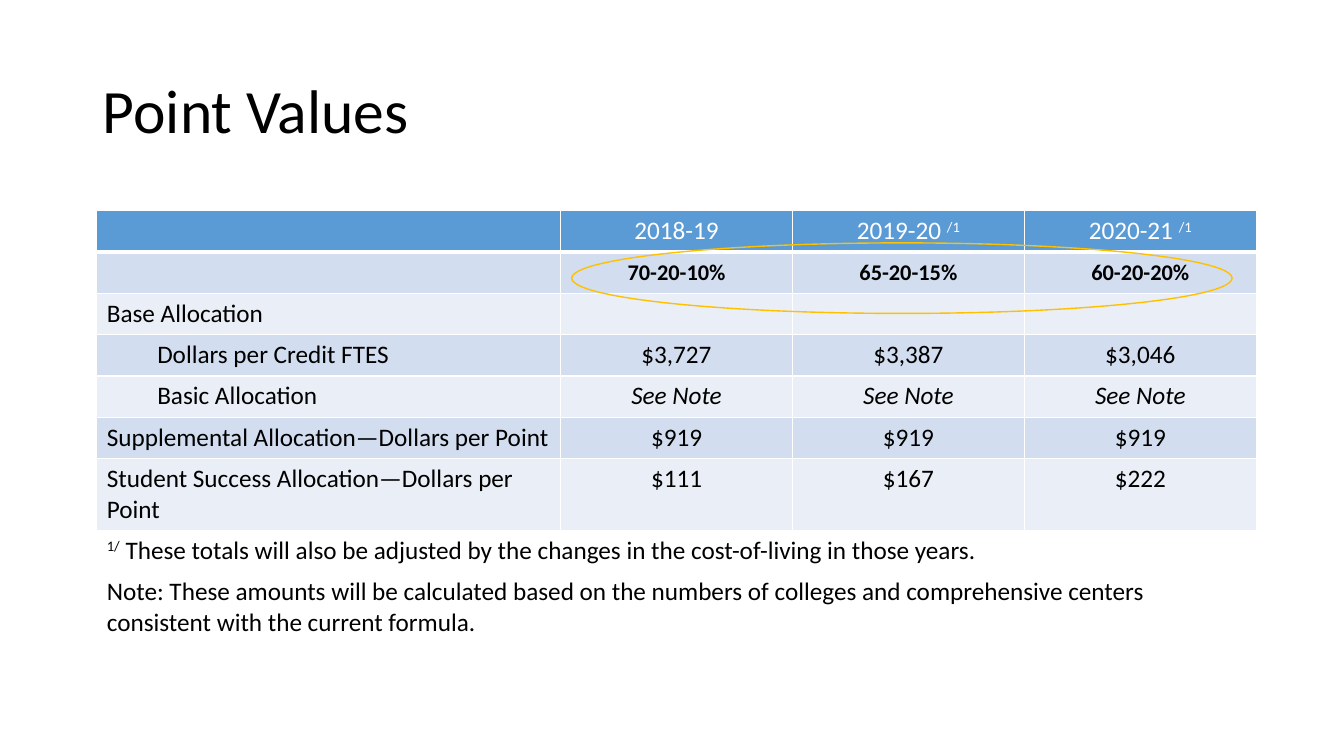
from dataclasses import dataclass, field

from lxml.etree import SubElement
from pptx import Presentation
from pptx.dml.color import RGBColor
from pptx.enum.shapes import MSO_SHAPE
from pptx.enum.text import MSO_ANCHOR, PP_ALIGN
from pptx.oxml.ns import qn
from pptx.util import Pt

PX = 9144  # EMU in one px, 100 px to the inch
COLOURS = {
    "header": "5B9BD5",
    "band_dark": "D2DEEF",
    "band_light": "EAEFF7",
    "white": "FFFFFF",
    "text": "000000",
    "highlight": "FFC000",
}
COLUMN_WIDTHS = [460, 230, 230, 230]
ROW_HEIGHT = 41
INDENT = 50
SUPERSCRIPT = "30000"


@dataclass
class Part:
    text: str
    raised: bool = False


@dataclass
class Row:
    label: list[Part]
    values: list[list[Part]]
    fill: str | None
    level: int = 0
    colour: str = "text"
    anchor: MSO_ANCHOR = MSO_ANCHOR.TOP
    format: dict = field(default_factory=dict)


def plain(*texts: str) -> list[list[Part]]:
    return [[Part(text)] if text else [] for text in texts]


def year(text: str) -> list[Part]:
    return [Part(f"{text} "), Part("/1", raised=True)]


ROWS = [
    Row([], [*plain("2018-19"), year("2019-20"), year("2020-21")],
        "header", colour="white"),
    Row([], plain("70-20-10%", "65-20-15%", "60-20-20%"), "band_dark",
        anchor=MSO_ANCHOR.MIDDLE, format={"size": Pt(16), "bold": True}),
    Row([Part("Base Allocation")], plain("", "", ""), "band_light"),
    Row([Part("Dollars per Credit FTES")], plain("$3,727", "$3,387", "$3,046"),
        "band_dark", level=1),
    Row([Part("Basic Allocation")], plain("See Note", "See Note", "See Note"),
        "band_light", level=1, format={"italic": True}),
    Row([Part("Supplemental Allocation—Dollars per Point")],
        plain("$919", "$919", "$919"), "band_dark"),
    Row([Part("Student Success Allocation—Dollars per Point")],
        plain("$111", "$167", "$222"), "band_light"),
    Row([Part("1/", raised=True),
         Part(" These totals will also be adjusted by the changes in the "
              "cost-of-living in those years.")], [], None),
    Row([Part("Note: These amounts will be calculated based on the numbers of "
              "colleges and comprehensive centers consistent with the current "
              "formula.")], [], None),
]


def rgb(name: str) -> RGBColor:
    return RGBColor.from_string(COLOURS[name])


def place(shape, left: int, top: int, width: int, height: int) -> None:
    box = {"left": left, "top": top, "width": width, "height": height}
    for name, length in box.items():
        setattr(shape, name, length * PX)


def format_font(font, colour: str, values: dict) -> None:
    for name, value in ({"name": "Calibri"} | values).items():
        setattr(font, name, value)
    font.color.rgb = rgb(colour)


def add_borders(cell, bottom_points: int) -> None:
    properties = cell._tc.get_or_add_tcPr()
    for side, points in {"L": 1, "R": 1, "T": 1, "B": bottom_points}.items():
        border = SubElement(properties, qn(f"a:ln{side}"), w=str(Pt(points)))
        fill = SubElement(border, qn("a:solidFill"))
        SubElement(fill, qn("a:srgbClr"), val=COLOURS["white"])


def fill_cell(cell, parts: list[Part], row: Row, is_label: bool) -> None:
    add_borders(cell, bottom_points=3 if row.fill == "header" else 1)
    if row.fill:
        cell.fill.solid()
        cell.fill.fore_color.rgb = rgb(row.fill)
    else:
        cell.fill.background()
    cell.vertical_anchor = row.anchor
    paragraph = cell.text_frame.paragraphs[0]
    paragraph.alignment = PP_ALIGN.LEFT if is_label else PP_ALIGN.CENTER
    if is_label and row.level:
        paragraph.level = row.level
        paragraph._p.get_or_add_pPr().set("marL", str(row.level * INDENT * PX))
    base = {"size": Pt(18), "bold": False, "italic": False}
    for part in parts:
        run = paragraph.add_run()
        run.text = part.text
        format_font(run.font, row.colour, base if is_label else base | row.format)
        if part.raised:
            run._r.get_or_add_rPr().set("baseline", SUPERSCRIPT)


def add_title(slide) -> None:
    title = slide.shapes.title
    place(title, 92, 40, 1150, 145)
    title.text_frame.text = "Point Values"
    title.text_frame.vertical_anchor = MSO_ANCHOR.MIDDLE
    paragraph = title.text_frame.paragraphs[0]
    paragraph.alignment = PP_ALIGN.LEFT
    paragraph.line_spacing = 0.9
    format_font(paragraph.runs[0].font, "text", {"size": Pt(44)})


def add_point_table(slide) -> None:
    frame = slide.shapes.add_table(
        len(ROWS), len(COLUMN_WIDTHS), 96 * PX, 209 * PX,
        sum(COLUMN_WIDTHS) * PX, len(ROWS) * ROW_HEIGHT * PX)
    table = frame.table
    for column, width in zip(table.columns, COLUMN_WIDTHS):
        column.width = width * PX
    for index, row in enumerate(ROWS):
        table.rows[index].height = ROW_HEIGHT * PX
        for column, parts in enumerate([row.label, *row.values]):
            fill_cell(table.cell(index, column), parts, row, column == 0)
        if not row.values:
            table.cell(index, 0).merge(table.cell(index, len(COLUMN_WIDTHS) - 1))


def add_highlight(slide) -> None:
    ellipse = slide.shapes.add_shape(
        MSO_SHAPE.OVAL, 567 * PX, 241 * PX, 655 * PX, 70 * PX)
    ellipse.shadow.inherit = False
    ellipse.fill.background()
    ellipse.line.color.rgb = rgb("highlight")
    ellipse.line.width = Pt(1)


def main() -> None:
    presentation = Presentation()
    presentation.slide_width = 1333 * PX
    presentation.slide_height = 750 * PX
    slide = presentation.slides.add_slide(presentation.slide_layouts[5])
    add_title(slide)
    add_point_table(slide)
    add_highlight(slide)
    presentation.save("out.pptx")


if __name__ == "__main__":
    main()
